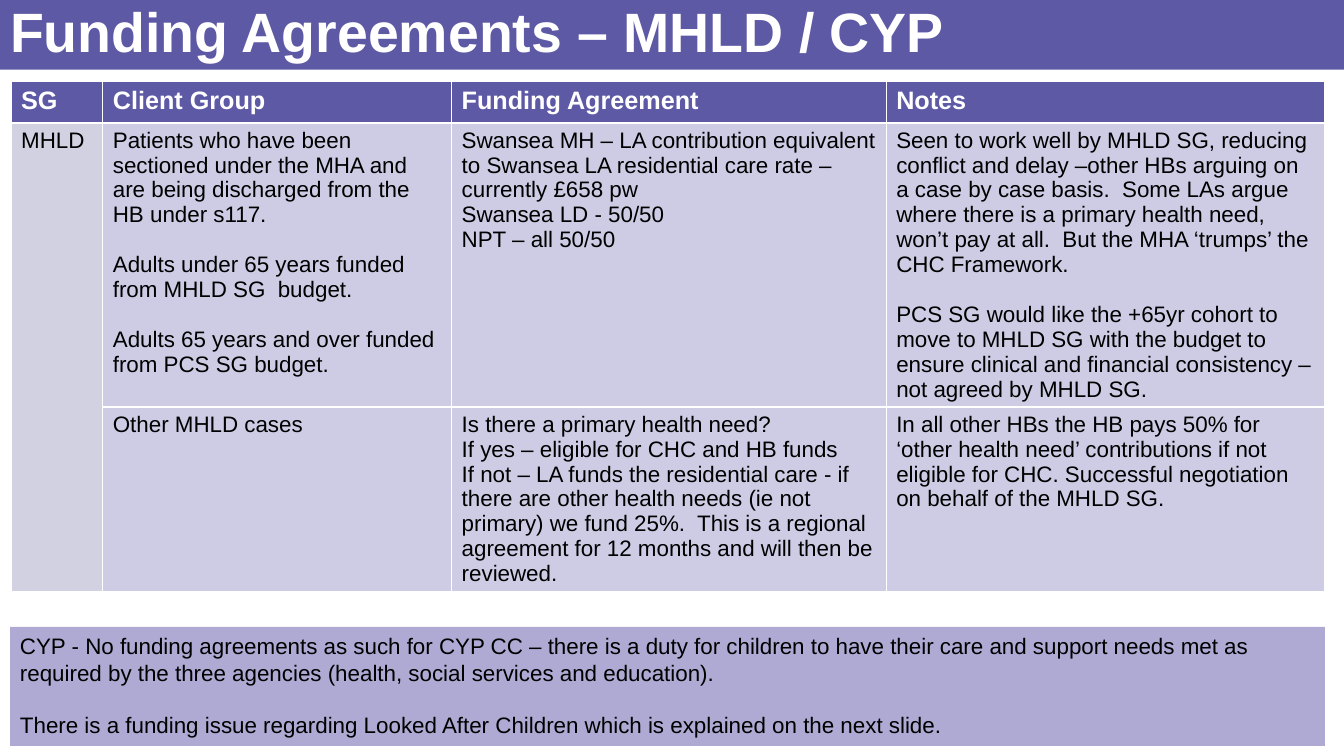
from pptx import Presentation
from pptx import util as u
from pptx.dml.color import RGBColor
from pptx.enum import shapes, text

COLORS = {"purple": "5D59A5", "grey": "D2D1E1", "lilac": "CECCE5",
          "violet": "AEAAD4", "white": "FFFFFF", "black": "000000"}
COL_WIDTHS = [0.91, 3.46, 4.31, 4.35]
ROW_HEIGHTS = [0.41, 2.81, 1.82]
PARA_GAP = 18

# Each cell is a list of blocks set apart by a gap; a block is a list of paragraphs.
HEADINGS = ["SG", "Client Group", "Funding Agreement", "Notes"]
MHLD_ROWS = [
    [
        [["MHLD"]],
        [["Patients who have been sectioned under the MHA and are being discharged "
          "from the HB under s117."],
         ["Adults under 65 years funded from MHLD SG  budget."],
         ["Adults 65 years and over funded from PCS SG budget."]],
        [["Swansea MH – LA contribution equivalent to Swansea LA residential care "
          "rate – currently £658 pw",
          "Swansea LD - 50/50",
          "NPT – all 50/50"]],
        [["Seen to work well by MHLD SG, reducing conflict and delay –other HBs arguing "
          "on a case by case basis.  Some LAs argue where there is a primary health need, "
          "won’t pay at all.  But the MHA ‘trumps’ the CHC Framework."],
         ["PCS SG would like the +65yr cohort to move to MHLD SG with the budget to ensure "
          "clinical and financial consistency – not agreed by MHLD SG."]],
    ],
    [
        [],
        [["Other MHLD cases"]],
        [["Is there a primary health need?",
          "If yes – eligible for CHC and HB funds",
          "If not – LA funds the residential care - if there are other health needs "
          "(ie not primary) we fund 25%.  This is a regional agreement for 12 months "
          "and will then be reviewed."]],
        [["In all other HBs the HB pays 50% for ‘other health need’ contributions if not "
          "eligible for CHC. Successful negotiation on behalf of the MHLD SG."]],
    ],
]
CYP_NOTE = [
    ["CYP - No funding agreements as such for CYP CC – there is a duty for children to have "
     "their care and support needs met as required by the three agencies (health, social "
     "services and education)."],
    ["There is a funding issue regarding Looked After Children which is explained on the "
     "next slide."],
]


class SlideBuilder:
    def __init__(self, prs, font="Arial"):
        self.font = font
        self.s = prs.slides.add_slide(prs.slide_layouts[5])

    def fill(self, obj, color):
        obj.fill.solid()
        obj.fill.fore_color.rgb = RGBColor.from_string(COLORS[color])

    def set_text(self, tf, blocks, size=16, color="black", bold=False):
        """Set blocks of paragraphs, with a gap before every block but the first."""
        lines = [(line, i > 0 and j == 0)
                 for i, block in enumerate(blocks) for j, line in enumerate(block)]
        tf.text = "\n".join(line for line, _ in lines)
        for p, (_, gap) in zip(tf.paragraphs, lines):
            p.alignment = text.PP_ALIGN.LEFT
            if gap:
                p.space_before = u.Pt(PARA_GAP)
            for r in p.runs:
                r.font.name, r.font.size, r.font.bold = self.font, u.Pt(size), bold
                r.font.color.rgb = RGBColor.from_string(COLORS[color])

    def rect(self, x, y, w, h, color):
        sp = self.s.shapes.add_shape(shapes.MSO_SHAPE.RECTANGLE, u.Inches(x), u.Inches(y),
                                     u.Inches(w), u.Inches(h))
        sp.shadow.inherit = False
        sp.line.fill.background()
        self.fill(sp, color)
        return sp

    def title(self, words):
        """Place the title on a full-width bar that lies behind it."""
        bar = self.rect(0, 0, 13.33, 0.69, "purple")
        sp = self.s.shapes.title
        sp.element.addprevious(bar.element)
        sp.left, sp.top, sp.width, sp.height = (u.Inches(v) for v in (0, 0, 11.5, 0.69))
        tf = sp.text_frame
        self.set_text(tf, [[words]], 39.6, "white", True)
        tf.vertical_anchor = text.MSO_ANCHOR.MIDDLE
        tf.auto_size = text.MSO_AUTO_SIZE.NONE
        tf.paragraphs[0].line_spacing = 0.9

    def table(self, x, y, headings, rows):
        tbl = self.s.shapes.add_table(
            len(ROW_HEIGHTS), len(COL_WIDTHS), u.Inches(x), u.Inches(y),
            u.Inches(sum(COL_WIDTHS)), u.Inches(sum(ROW_HEIGHTS))).table
        for col, width in zip(tbl.columns, COL_WIDTHS):
            col.width = u.Inches(width)
        for row, height in zip(tbl.rows, ROW_HEIGHTS):
            row.height = u.Inches(height)
        for c, heading in enumerate(headings):
            self.fill(tbl.cell(0, c), "purple")
            self.set_text(tbl.cell(0, c).text_frame, [[heading]], 18, "white", True)
        for r, row in enumerate(rows, 1):
            for c, blocks in enumerate(row):
                self.fill(tbl.cell(r, c), "lilac" if c else "grey")
                self.set_text(tbl.cell(r, c).text_frame, blocks)
        tbl.cell(1, 0).merge(tbl.cell(len(rows), 0))

    def note(self, x, y, w, h, blocks):
        tf = self.rect(x, y, w, h, "violet").text_frame
        tf.word_wrap = True
        tf.vertical_anchor = text.MSO_ANCHOR.TOP
        self.set_text(tf, blocks)


def main():
    prs = Presentation()
    prs.slide_width, prs.slide_height = u.Inches(13.33), u.Inches(7.5)
    slide = SlideBuilder(prs)
    slide.title("Funding Agreements – MHLD / CYP")
    slide.table(0.11, 0.81, HEADINGS, MHLD_ROWS)
    slide.note(0.1, 6.22, 13.04, 1.18, CYP_NOTE)
    prs.save("out.pptx")


if __name__ == "__main__":
    main()
